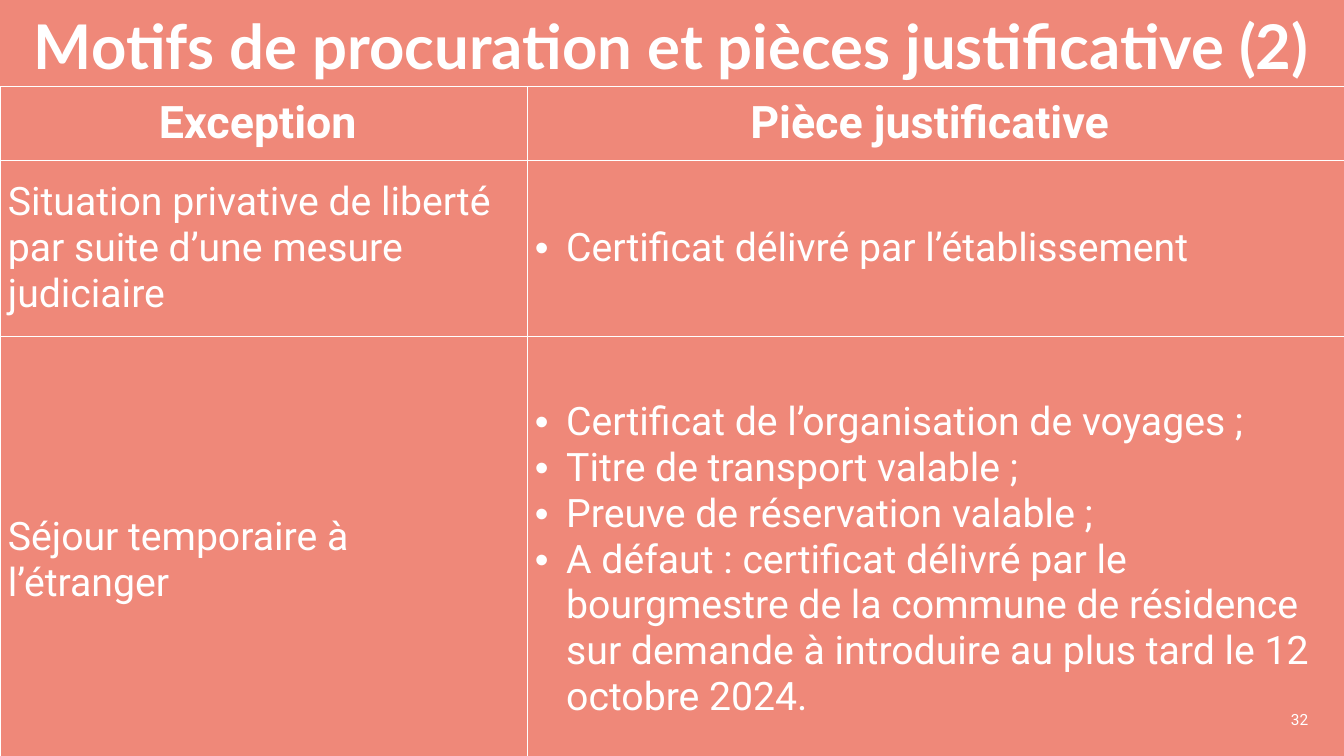
import pptx
import pptx.util
import pptx.dml.color
import pptx.enum.text
import pptx.oxml
import pptx.oxml.ns
from lxml import etree

Cm, Pt = pptx.util.Cm, pptx.util.Pt
ALIGN = pptx.enum.text.PP_ALIGN
ANCHOR = pptx.enum.text.MSO_ANCHOR

# Content
TITLE = "Motifs de procuration et pièces justificative (2)"
NUMBER = "32"
HEADS = ["Exception ", "Pièce justificative "]
ROWS = [
    ("Situation privative de liberté par suite d’une mesure judiciaire ",
     ["Certificat délivré par l’établissement "]),
    ("Séjour temporaire à l’étranger ",
     ["Certificat de l’organisation de voyages ; ",
      "Titre de transport valable ; ",
      "Preuve de réservation valable ;",
      "A défaut : certificat délivré par le bourgmestre de la commune de "
      "résidence sur demande à introduire au plus tard le 12 octobre 2024. "]),
]

# Sizes in cm
WIDE, HIGH = 33.87, 19.05
TOP = 2.18
LEFT = 13.28
COLS = [LEFT, WIDE - LEFT]
TALL = [1.85, 4.45, 11.25]
INDENT = 0.79
BACK, WHITE = "EF8879", "FFFFFF"


def color(code):
    return pptx.dml.color.RGBColor.from_string(code)


def write(frame, lines, size, align, bold=False, face="Roboto", bullet=False):
    for i, line in enumerate(lines):
        para = frame.paragraphs[0] if i == 0 else frame.add_paragraph()
        para.text = line
        para.alignment = align
        font = para.font
        font.name, font.size, font.bold = face, Pt(size), bold
        font.color.rgb = color(WHITE)
        for run in para.runs:
            run.font.name, run.font.size, run.font.bold = face, Pt(size), bold
            run.font.color.rgb = color(WHITE)
        if bullet:
            props = para._p.get_or_add_pPr()
            props.set("marL", str(Cm(INDENT)))
            props.set("indent", str(-Cm(INDENT)))
            mark = [("buFont", "typeface", "Arial"), ("buChar", "char", "•")]
            for j, (tag, key, value) in enumerate(mark):
                node = etree.Element(pptx.oxml.ns.qn("a:" + tag))
                node.set(key, value)
                props.insert(j, node)


def label(x, y, w, h, anchor, text, size, align, **style):
    frame = slide.shapes.add_textbox(Cm(x), Cm(y), Cm(w), Cm(h)).text_frame
    frame.word_wrap = True
    frame.vertical_anchor = anchor
    write(frame, [text], size, align, **style)
    return frame


def border(cell):
    props = cell._tc.get_or_add_tcPr()
    for side in "LRTB":
        props.append(pptx.oxml.parse_xml(
            f'<a:ln{side} {pptx.oxml.ns.nsdecls("a")} w="{Pt(0.6)}">'
            f'<a:solidFill><a:srgbClr val="{WHITE}"/></a:solidFill></a:ln{side}>'))


# Slide
deck = pptx.Presentation()
deck.slide_width, deck.slide_height = Cm(WIDE), Cm(HIGH)
slide = deck.slides.add_slide(deck.slide_layouts[6])
slide.background.fill.solid()
slide.background.fill.fore_color.rgb = color(BACK)

# Title and slide number
title = label(0, 0, WIDE, TOP, ANCHOR.BOTTOM, TITLE, 44, ALIGN.CENTER,
              bold=True, face="Lato")
title.paragraphs[0].line_spacing = Pt(44)
label(25.6, 17.63, 7.62, 1.02, ANCHOR.MIDDLE, NUMBER, 11, ALIGN.RIGHT)

# Table
table = slide.shapes.add_table(len(TALL), len(COLS), 0, Cm(TOP),
                               Cm(WIDE), Cm(sum(TALL))).table
table.first_row = table.horz_banding = False
for col, width in zip(table.columns, COLS):
    col.width = Cm(width)
for row, height in zip(table.rows, TALL):
    row.height = Cm(height)
for cell in table.iter_cells():
    border(cell)
    cell.fill.background()
    cell.vertical_anchor = ANCHOR.MIDDLE
    cell.margin_left = cell.margin_right = Cm(0.2)
    cell.margin_top = cell.margin_bottom = Cm(0.1)

for c, head in enumerate(HEADS):
    write(table.cell(0, c).text_frame, [head], 32, ALIGN.CENTER, bold=True)
for r, (cause, proofs) in enumerate(ROWS, 1):
    write(table.cell(r, 0).text_frame, [cause], 28, ALIGN.LEFT)
    write(table.cell(r, 1).text_frame, proofs, 28, ALIGN.LEFT, bullet=True)

deck.save("out.pptx")
